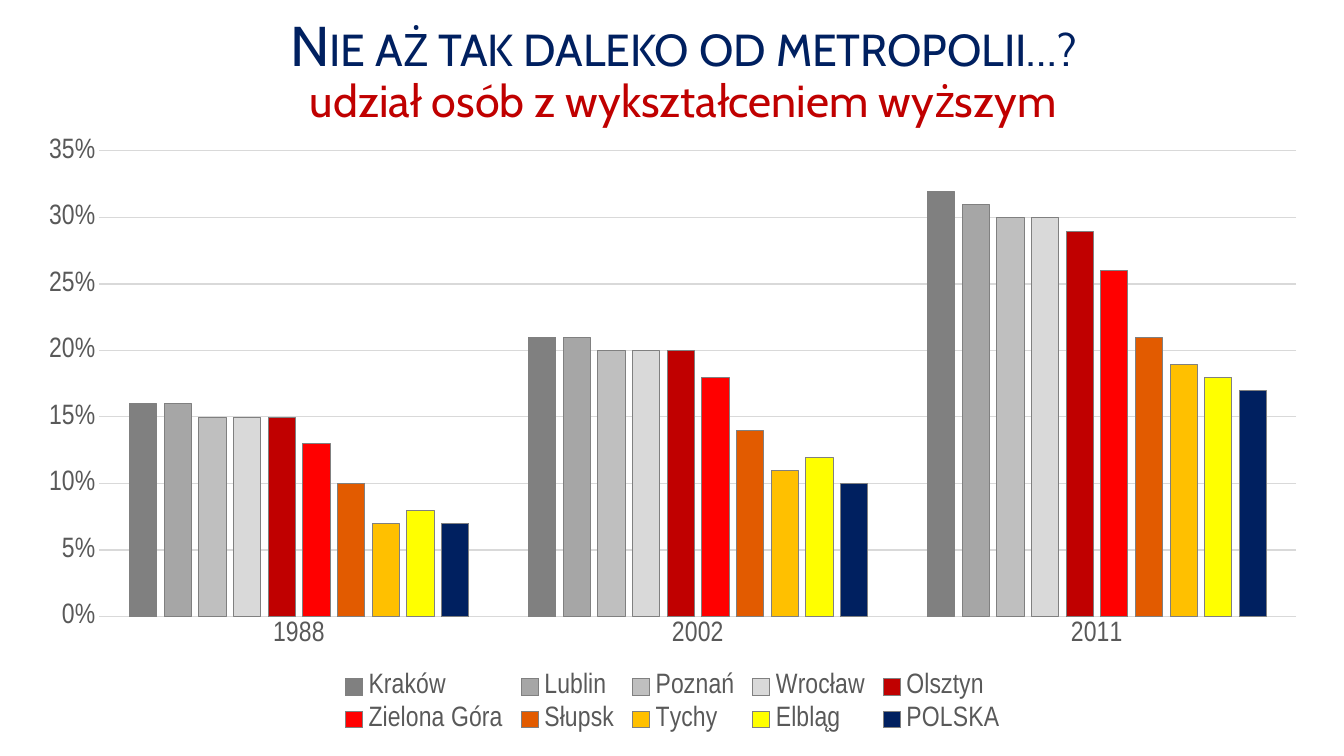
import pptx
import pptx.chart.data
import pptx.dml.color
import pptx.enum.chart
import pptx.enum.text
import pptx.util

Cm = pptx.util.Cm
Pt = pptx.util.Pt

COLORS = {
    "navy": "002060", "red": "C00000", "text": "595959",
    "grid": "D9D9D9", "edge": "808080",
}
YEARS = ["1988", "2002", "2011"]
CITIES = [
    ("Kraków", "808080", (0.16, 0.21, 0.32)),
    ("Lublin", "A6A6A6", (0.16, 0.21, 0.31)),
    ("Poznań", "BFBFBF", (0.15, 0.20, 0.30)),
    ("Wrocław", "D9D9D9", (0.15, 0.20, 0.30)),
    ("Olsztyn", "C00000", (0.15, 0.20, 0.29)),
    ("Zielona Góra", "FF0000", (0.13, 0.18, 0.26)),
    ("Słupsk", "E25B00", (0.10, 0.14, 0.21)),
    ("Tychy", "FFC000", (0.07, 0.11, 0.19)),
    ("Elbląg", "FFFF00", (0.08, 0.12, 0.18)),
    ("POLSKA", "002060", (0.07, 0.10, 0.17)),
]


def rgb(code):
    return pptx.dml.color.RGBColor.from_string(code)


def style(font, face, size, color):
    font.name = face
    font.size = Pt(size)
    font.bold = False
    font.color.rgb = rgb(color)


def rule(line, color, width):
    line.color.rgb = rgb(color)
    line.width = Pt(width)


def add_title(slide, box):
    title = slide.shapes.title
    title.left, title.top, title.width, title.height = box
    frame = title.text_frame
    frame.word_wrap = True
    frame.auto_size = pptx.enum.text.MSO_AUTO_SIZE.NONE
    frame.vertical_anchor = pptx.enum.text.MSO_ANCHOR.MIDDLE
    para = frame.paragraphs[0]
    para.text = "Nie aż tak daleko od metropolii…?\vudział osób z wykształceniem wyższym"
    para.alignment = pptx.enum.text.PP_ALIGN.CENTER
    para.line_spacing = 0.9
    head, sub = para.runs
    style(head.font, "Cabin", 40, COLORS["navy"])
    style(sub.font, "Cabin", 32, COLORS["red"])
    head.font._element.set("cap", "small")


def format_axes(chart):
    kinds = pptx.enum.chart
    for axis in (chart.category_axis, chart.value_axis):
        axis.major_tick_mark = kinds.XL_TICK_MARK.NONE
        axis.minor_tick_mark = kinds.XL_TICK_MARK.NONE
        style(axis.tick_labels.font, "Arial Narrow", 20, COLORS["text"])
    rule(chart.category_axis.format.line, COLORS["grid"], 0.75)
    scale = chart.value_axis
    scale.minimum_scale = 0
    scale.maximum_scale = 0.35
    scale.major_unit = 0.05
    scale.tick_labels.number_format = "0%"
    scale.tick_labels.number_format_is_linked = False
    scale.format.line.fill.background()
    rule(scale.major_gridlines.format.line, COLORS["grid"], 0.75)


def add_bars(slide, box):
    kinds = pptx.enum.chart
    data = pptx.chart.data.CategoryChartData(number_format="0%")
    data.categories = YEARS
    for name, _, shares in CITIES:
        data.add_series(name, shares)
    chart = slide.shapes.add_chart(
        kinds.XL_CHART_TYPE.COLUMN_CLUSTERED, *box, data).chart
    style(chart.font, "Calibri", 10, "000000")
    chart.has_title = False
    format_axes(chart)

    plot = chart.plots[0]
    plot.gap_width = 219
    plot.overlap = -27
    plot.vary_by_categories = False
    for bar, (_, color, _) in zip(plot.series, CITIES):
        bar.format.fill.solid()
        bar.format.fill.fore_color.rgb = rgb(color)
        bar.invert_if_negative = False
        rule(bar.format.line, COLORS["edge"], 0.25)

    chart.has_legend = True
    chart.legend.position = kinds.XL_LEGEND_POSITION.BOTTOM
    chart.legend.include_in_layout = False
    style(chart.legend.font, "Arial Narrow", 20, COLORS["text"])


def main():
    deck = pptx.Presentation()
    deck.slide_width = Cm(33.87)
    deck.slide_height = Cm(19.05)
    slide = deck.slides.add_slide(deck.slide_layouts.get_by_name("Title Only"))
    add_title(slide, (Cm(2.62), Cm(0), Cm(29.21), Cm(3.68)))
    add_bars(slide, (Cm(0.58), Cm(3.15), Cm(32.74), Cm(15.47)))
    deck.save("out.pptx")


if __name__ == "__main__":
    main()
